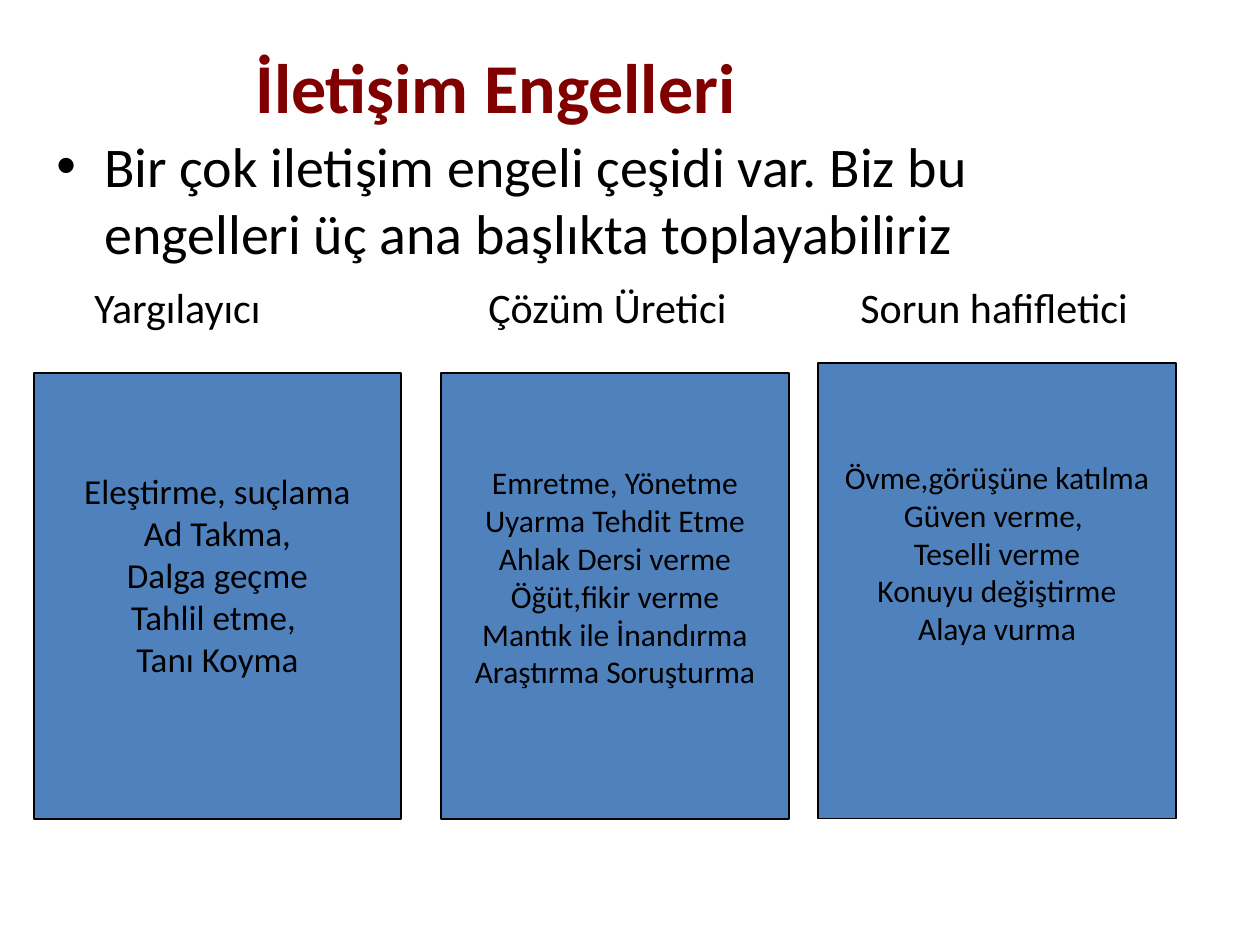
from lxml.etree import SubElement
from pptx import Presentation
from pptx.dml.color import RGBColor
from pptx.enum.shapes import MSO_SHAPE as SHAPE
from pptx.enum.text import MSO_ANCHOR as ANCHOR, PP_ALIGN as ALIGN
from pptx.oxml.ns import qn
from pptx.util import Pt

# Content: lengths in px, text sizes in points
PX = 914400 // 126
FONT = "Calibri"
COLORS = {"title": "800000", "text": "000000", "box": "4F81BD", "line": "000000"}
TITLE = "İletişim Engelleri"
INTRO = "Bir çok iletişim engeli çeşidi var. Biz bu engelleri üç ana başlıkta toplayabiliriz"
HEADINGS = [("Yargılayıcı", 38), ("Çözüm Üretici", 432), ("Sorun hafifletici", 804)]
INSET, HANG = 6, 48
BOTTOM = 819
# left, top, width, text size, lines kept free below the text, text lines
BOXES = [
    (34, 373, 367, 20, 1, ["Eleştirme, suçlama", "Ad Takma,", "Dalga geçme",
                           "Tahlil etme, ", "Tanı Koyma"]),
    (441, 373, 348, 18, 1, ["Emretme, Yönetme", "Uyarma Tehdit Etme",
                            "Ahlak Dersi verme", "Öğüt,fikir verme",
                            "Mantık ile İnandırma", "Araştırma Soruşturma"]),
    (818, 363, 358, 18, 2, ["Övme,görüşüne katılma", "Güven verme, ",
                            "Teselli verme", "Konuyu değiştirme", "Alaya vurma"]),
]


def px(*values):
    return [v * PX for v in values]


def color(name):
    return RGBColor.from_string(COLORS[name])


def add_run(p, text, size, name="text", bold=False):
    r = p.add_run()
    r.text = text
    r.font.name, r.font.size, r.font.bold = FONT, Pt(size), bold
    r.font.color.rgb = color(name)


prs = Presentation()
prs.slide_width, prs.slide_height = px(1260, 945)
s = prs.slides.add_slide(prs.slide_layouts[5])

# Title
title = s.shapes.title
title.left, title.top, title.width, title.height = px(74, 35, 843, 100)
tf = title.text_frame
tf.vertical_anchor = ANCHOR.MIDDLE
p = tf.paragraphs[0]
p.alignment = ALIGN.CENTER
add_run(p, TITLE, 40, "title", True)

# Bulleted introduction
tf = s.shapes.add_textbox(*px(44, 125, 1101, 704)).text_frame
tf.word_wrap = True
p = tf.paragraphs[0]
add_run(p, INTRO, 32)
pPr = p._p.get_or_add_pPr()
pPr.set("marL", str(HANG * PX))
pPr.set("indent", str(-HANG * PX))
SubElement(pPr, qn("a:buFont")).set("typeface", "Arial")
SubElement(pPr, qn("a:buChar")).set("char", "•")

# Column headings, one per tab stop
p = tf.add_paragraph()
p.space_before = Pt(9)
tabs = SubElement(p._p.get_or_add_pPr(), qn("a:tabLst"))
for heading, x in HEADINGS:
    tab = SubElement(tabs, qn("a:tab"))
    tab.set("pos", str(x * PX))
    tab.set("algn", "l")
    add_run(p, "\t" + heading, 24)

# Boxes
for left, top, width, size, free, lines in BOXES:
    sp = s.shapes.add_shape(SHAPE.RECTANGLE, *px(left, top, width, BOTTOM - top))
    sp.shadow.inherit = False
    sp.fill.solid()
    sp.fill.fore_color.rgb = color("box")
    sp.line.color.rgb = color("line")
    sp.line.width = Pt(0.75)
    tf = sp.text_frame
    tf.word_wrap = False
    tf.vertical_anchor = ANCHOR.MIDDLE
    tf.margin_top = INSET * PX
    tf.margin_bottom = INSET * PX + Pt(free * size * 1.22)
    for i, line in enumerate(lines):
        p = tf.add_paragraph() if i else tf.paragraphs[0]
        p.alignment = ALIGN.CENTER
        add_run(p, line, size)

prs.save("out.pptx")
